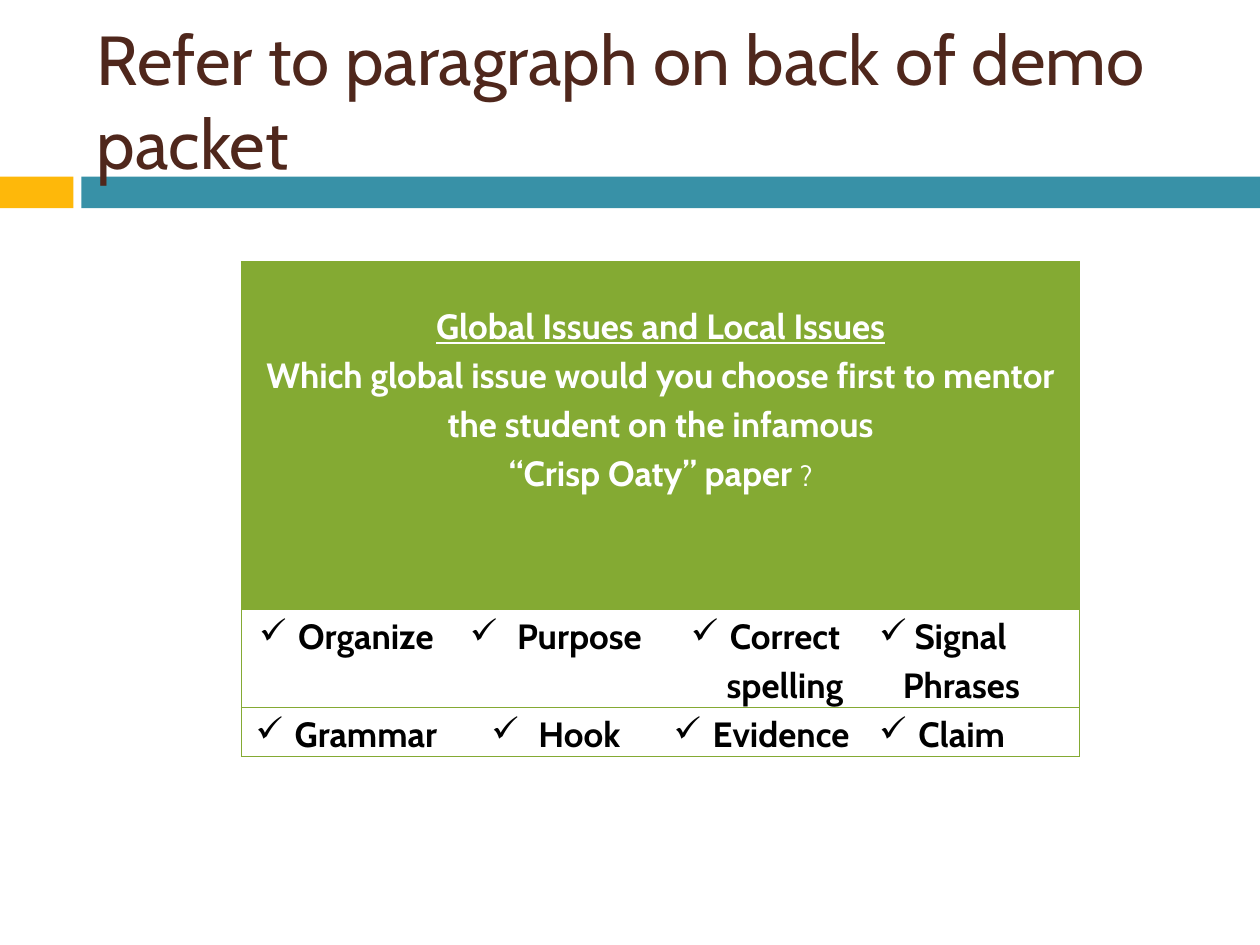
from dataclasses import dataclass

from lxml import etree
from pptx import Presentation
from pptx import util as u
from pptx.dml.color import RGBColor
from pptx.enum import shapes, text
from pptx.oxml import ns


@dataclass(frozen=True)
class Theme:
    font: str = "Cabin"
    brown: str = "4F271C"
    amber: str = "FEB80A"
    teal: str = "3891A7"
    green: str = "84AA33"
    white: str = "FFFFFF"
    black: str = "000000"
    title_size: float = 39.6
    body_size: float = 20
    small_size: float = 16
    border_width: float = 0.79
    line_spacing: float = 1.15


def write(paragraph, content, *, theme, size, color, bold=False, underline=False):
    run = paragraph.add_run()
    run.text = content
    font = run.font
    font.name = theme.font
    font.size = u.Pt(size)
    font.bold = bold
    font.underline = underline
    font.color.rgb = RGBColor.from_string(color)


class SlideBuilder:
    def __init__(self, presentation, theme):
        self.theme = theme
        self.slide = presentation.slides.add_slide(presentation.slide_layouts[5])

    def title(self, content, left, top, width, height):
        shape = self.slide.shapes.title
        shape.left, shape.top = u.Cm(left), u.Cm(top)
        shape.width, shape.height = u.Cm(width), u.Cm(height)
        frame = shape.text_frame
        frame.word_wrap = True
        frame.auto_size = text.MSO_AUTO_SIZE.NONE
        frame.vertical_anchor = text.MSO_ANCHOR.MIDDLE
        paragraph = frame.paragraphs[0]
        paragraph.alignment = text.PP_ALIGN.LEFT
        write(paragraph, content, theme=self.theme,
              size=self.theme.title_size, color=self.theme.brown)

    def bar(self, left, top, width, height, color):
        shape = self.slide.shapes.add_shape(
            shapes.MSO_SHAPE.RECTANGLE, u.Cm(left), u.Cm(top), u.Cm(width), u.Cm(height))
        shape.shadow.inherit = False
        shape.fill.solid()
        shape.fill.fore_color.rgb = RGBColor.from_string(color)
        shape.line.fill.background()
        self.slide.shapes.title.element.addprevious(shape.element)

    def table(self, left, top, width, row_heights, columns):
        frame = self.slide.shapes.add_table(
            len(row_heights), columns, u.Cm(left), u.Cm(top),
            u.Cm(width), u.Cm(sum(row_heights)))
        table = frame.table
        table.first_row = table.horz_banding = False
        for row, height in zip(table.rows, row_heights):
            row.height = u.Cm(height)
            for column, cell in enumerate(row.cells):
                cell.margin_left = cell.margin_right = u.Cm(0.18)
                cell.margin_top = cell.margin_bottom = 0
                self.borders(cell, {"L": column == 0, "R": column == columns - 1,
                                    "T": True, "B": True})
                cell.fill.background()
        return table

    def borders(self, cell, sides):
        properties = cell._tc.get_or_add_tcPr()
        for side, visible in sides.items():
            line = etree.SubElement(properties, ns.qn(f"a:ln{side}"),
                                    w=str(int(u.Pt(self.theme.border_width))))
            if visible:
                fill = etree.SubElement(line, ns.qn("a:solidFill"))
                etree.SubElement(fill, ns.qn("a:srgbClr"), val=self.theme.green)
            else:
                etree.SubElement(line, ns.qn("a:noFill"))

    def header(self, table, heading, question, ending):
        theme = self.theme
        cell = table.cell(0, 0)
        cell.merge(table.cell(0, len(table.columns) - 1))
        cell.fill.solid()
        cell.fill.fore_color.rgb = RGBColor.from_string(theme.green)
        cell.margin_top = u.Cm(0.75)
        style = dict(theme=theme, color=theme.white)
        frame = cell.text_frame
        first, second = frame.paragraphs[0], frame.add_paragraph()
        for paragraph in (first, second):
            paragraph.alignment = text.PP_ALIGN.CENTER
            paragraph.line_spacing = theme.line_spacing
        write(first, heading, size=theme.body_size, bold=True, underline=True, **style)
        for index, line in enumerate(question):
            if index:
                second.add_line_break()
            write(second, line, size=theme.body_size, bold=True, **style)
        write(second, ending, size=theme.small_size, **style)

    def check_item(self, cell, content, alignment, indent):
        paragraph = cell.text_frame.paragraphs[0]
        paragraph.alignment = alignment
        paragraph.line_spacing = self.theme.line_spacing
        properties = paragraph._p.get_or_add_pPr()
        properties.set("marL", str(int(u.Cm(indent))))
        properties.set("indent", str(-int(u.Cm(indent))))
        etree.SubElement(properties, ns.qn("a:buChar"), char="✓")
        write(paragraph, content, theme=self.theme, size=self.theme.body_size,
              color=self.theme.black, bold=True)


def main():
    presentation = Presentation()
    presentation.slide_width, presentation.slide_height = u.Cm(25.4), u.Cm(19.05)
    theme = Theme()
    builder = SlideBuilder(presentation, theme)

    builder.bar(0, 3.56, 1.48, 0.64, theme.amber)
    builder.bar(1.64, 3.56, 23.76, 0.64, theme.teal)
    builder.title("Refer to paragraph on back of demo packet", 1.7, 0.64, 22.66, 2.74)

    table = builder.table(4.87, 5.28, 16.9, (7, 1.98, 0.99), 4)
    builder.header(table, "Global Issues and Local Issues",
                   ("Which global issue would you choose first to mentor "
                    "the student on the infamous", "“Crisp Oaty” paper "), "?")

    center, left = text.PP_ALIGN.CENTER, text.PP_ALIGN.LEFT
    issues = (
        ("Organize", " Purpose", "Correct spelling", " Signal Phrases"),
        ("Grammar", " Hook", "Evidence\u00a0", "Claim\u00a0"),
    )
    for row, names in enumerate(issues, start=1):
        for column, name in enumerate(names):
            builder.check_item(table.cell(row, column), name,
                               left if column == 3 else center,
                               0.48 if (row, column) == (1, 3) else 0.79)

    presentation.save("out.pptx")


if __name__ == "__main__":
    main()
